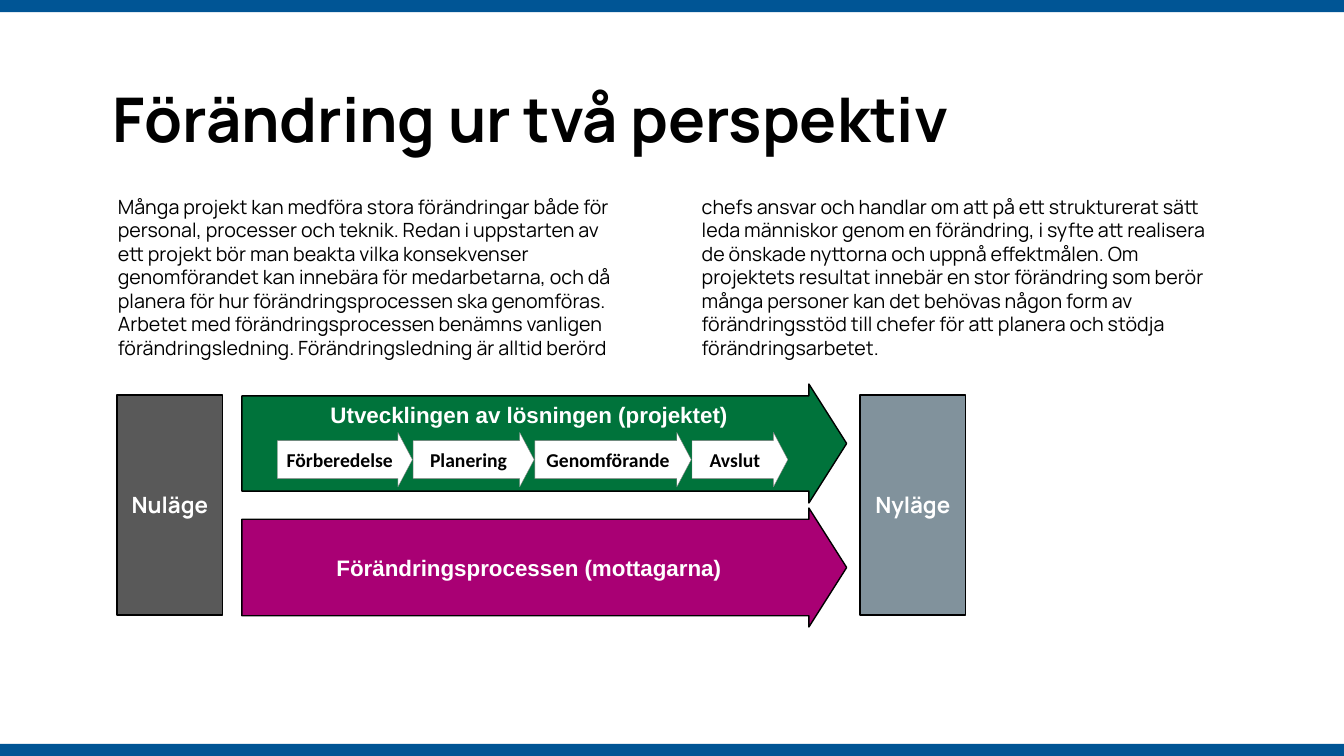
from dataclasses import dataclass

from pptx import Presentation
from pptx.dml.color import RGBColor
from pptx.enum.shapes import MSO_SHAPE
from pptx.enum.text import MSO_ANCHOR, MSO_AUTO_SIZE, PP_ALIGN
from pptx.shapes.autoshape import Shape
from pptx.shapes.shapetree import GroupShapes, SlideShapes
from pptx.text.text import TextFrame
from pptx.util import Inches, Pt

# The grid has 100 columns and 100 rows
PAGE_WIDTH, PAGE_HEIGHT = Inches(13.33), Inches(7.5)
COLUMN, ROW = PAGE_WIDTH / 100, PAGE_HEIGHT / 100


@dataclass(frozen=True)
class TextStyle:
    font: str
    size: float
    color: str
    bold: bool = True


@dataclass(frozen=True)
class Theme:
    band: str = "005595"
    project: str = "00733B"
    change: str = "A90074"
    present: str = "595959"
    future: str = "81929C"
    step: str = "FFFFFF"
    outline: str = "000000"
    step_outline: str = "808080"
    title: TextStyle = TextStyle("Manrope", 44, "000000")
    body: TextStyle = TextStyle("Manrope", 14, "000000", False)
    state_label: TextStyle = TextStyle("Manrope", 16, "FFFFFF")
    track_label: TextStyle = TextStyle("Arial", 16, "FFFFFF")
    step_label: TextStyle = TextStyle("Calibri", 14, "000000")


THEME = Theme()


@dataclass(frozen=True)
class Area:
    """A place on the grid: left and width in columns, top and height in rows."""
    left: float
    top: float
    width: float
    height: float

    def lengths(self) -> tuple[int, int, int, int]:
        return (round(self.left * COLUMN), round(self.top * ROW),
                round(self.width * COLUMN), round(self.height * ROW))


@dataclass(frozen=True)
class Block:
    area: Area
    fill: str
    label: str = ""
    style: TextStyle = THEME.state_label
    outline: str = THEME.outline
    outline_width: float = 1
    arrow: tuple[float, float] | None = None  # shaft share, head share
    anchor: MSO_ANCHOR = MSO_ANCHOR.MIDDLE


TITLE = "Förändring ur två perspektiv"
BODY = [
    "Många projekt kan medföra stora förändringar både för personal, processer "
    "och teknik. Redan i uppstarten av ett projekt bör man beakta vilka "
    "konsekvenser genomförandet kan innebära för medarbetarna, och då planera "
    "för hur förändringsprocessen ska genomföras.",
    "Arbetet med förändringsprocessen benämns vanligen förändringsledning. "
    "Förändringsledning är alltid berörd chefs ansvar och handlar om att på ett "
    "strukturerat sätt leda människor genom en förändring, i syfte att realisera "
    "de önskade nyttorna och uppnå effektmålen. Om projektets resultat innebär en "
    "stor förändring som berör många personer kan det behövas någon form av "
    "förändringsstöd till chefer för att planera och stödja förändringsarbetet.",
]
STEP_WIDTHS = {"Förberedelse": 10.05, "Planering": 9, "Genomförande": 11.63, "Avslut": 7.13}
STEPS_LEFT, STEP_GAP = 20.63, 0.06
BAND_HEIGHT = 1.6


def write(frame: TextFrame, texts: list[str], style: TextStyle, align: PP_ALIGN) -> None:
    for index, text in enumerate(texts):
        para = frame.paragraphs[0] if index == 0 else frame.add_paragraph()
        para.text = text
        para.alignment = align
        para.font.name = style.font
        para.font.size = Pt(style.size)
        para.font.bold = style.bold
        para.font.color.rgb = RGBColor.from_string(style.color)


def add_text(shapes: SlideShapes, area: Area, texts: list[str],
             style: TextStyle, wrap: bool) -> TextFrame:
    frame = shapes.add_textbox(*area.lengths()).text_frame
    frame.word_wrap = wrap
    frame.auto_size = MSO_AUTO_SIZE.SHAPE_TO_FIT_TEXT
    write(frame, texts, style, PP_ALIGN.LEFT)
    return frame


def add_block(shapes: SlideShapes | GroupShapes, block: Block) -> Shape:
    preset = MSO_SHAPE.RIGHT_ARROW if block.arrow else MSO_SHAPE.RECTANGLE
    shape = shapes.add_shape(preset, *block.area.lengths())
    shape.shadow.inherit = False
    shape.fill.solid()
    shape.fill.fore_color.rgb = RGBColor.from_string(block.fill)
    if block.outline_width:
        shape.line.color.rgb = RGBColor.from_string(block.outline)
        shape.line.width = Pt(block.outline_width)
    else:
        shape.line.fill.background()
    if block.arrow:
        shape.adjustments[0], shape.adjustments[1] = block.arrow
    if block.label:
        frame = shape.text_frame
        frame.word_wrap = block.arrow is None
        frame.vertical_anchor = block.anchor
        write(frame, [block.label], block.style, PP_ALIGN.CENTER)
    return shape


def track(top: float, fill: str, label: str, shaft: float, anchor: MSO_ANCHOR) -> Block:
    return Block(Area(18, top, 45, 15.73), fill, label, THEME.track_label,
                 arrow=(shaft, 0.317), anchor=anchor)


def state(left: float, fill: str, label: str) -> Block:
    return Block(Area(left, 52.27, 7.88, 29.07), fill, label)


def steps() -> list[Block]:
    blocks, left = [], STEPS_LEFT
    for label, width in STEP_WIDTHS.items():
        blocks.append(Block(Area(left, 57.2, width, 7.2), THEME.step, label,
                            THEME.step_label, THEME.step_outline, 0.25, (0.697, 0.264)))
        left += width + STEP_GAP
    return blocks


def main() -> None:
    deck = Presentation()
    deck.slide_width, deck.slide_height = PAGE_WIDTH, PAGE_HEIGHT
    page = deck.slides.add_slide(deck.slide_layouts[6])

    # Bands along the top and bottom edges
    for top in (0, 100 - BAND_HEIGHT):
        add_block(page.shapes, Block(Area(0, top, 100, BAND_HEIGHT), THEME.band, outline_width=0))

    # Heading and two-column text
    add_text(page.shapes, Area(7.65, 10, 65.18, 11.2), [TITLE], THEME.title, wrap=False)
    body = add_text(page.shapes, Area(8.03, 25.07, 82.43, 23.33), BODY, THEME.body, wrap=True)
    columns = body._txBody.bodyPr
    columns.set("numCol", "2")
    columns.set("spcCol", str(Inches(0.79)))

    # Diagram: two tracks lead from the present state to the new one
    diagram = page.shapes.add_group_shape()
    blocks = [
        track(50.8, THEME.project, "Utvecklingen av lösningen (projektet)", 0.801, MSO_ANCHOR.TOP),
        *steps(),
        track(67.2, THEME.change, "Förändringsprocessen (mottagarna)", 0.812, MSO_ANCHOR.MIDDLE),
        state(63.98, THEME.future, "Nyläge"),
        state(8.7, THEME.present, "Nuläge"),
    ]
    for block in blocks:
        add_block(diagram.shapes, block)

    deck.save("out.pptx")


if __name__ == "__main__":
    main()
